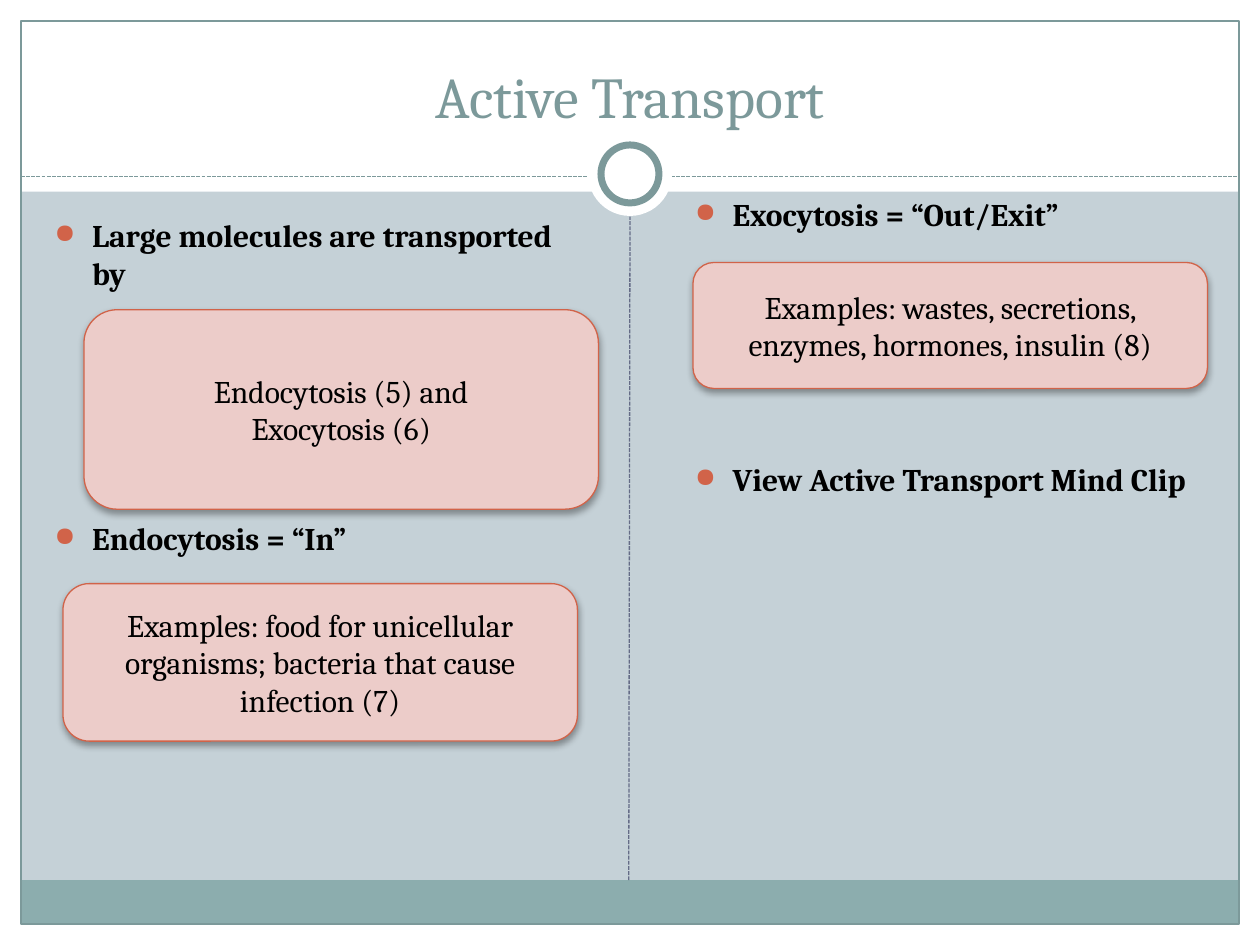
from lxml import etree
from pptx import Presentation
from pptx import util as u
from pptx.dml.color import RGBColor
from pptx.enum import dml, shapes, text
from pptx.oxml import parse_xml
from pptx.oxml.ns import nsdecls, qn

COLORS = {"background": "C5D1D7", "white": "FFFFFF", "footer": "8CADAE", "frame": "7C999A",
          "divider": "646B86", "accent": "D16349", "card": "ECCCC9", "ink": "000000"}
FONT = "Cambria"
WIDTH, HEIGHT, EDGE = 720, 540, 12
BODY_SIZE, INDENT, BULLET_GAP = 18, 21.6, 130

TITLE = ("Active Transport", (24, 18, 672, 60))
BANDS = [
    ("white", (0, HEIGHT - EDGE, WIDTH, EDGE)),
    ("white", (0, 0, WIDTH, 109.5)),
    ("white", (0, 0, EDGE, HEIGHT)),
    ("white", (WIDTH - EDGE, 0, EDGE, HEIGHT)),
    ("footer", (EDGE, 503, WIDTH - 2 * EDGE, 25)),
]
FRAME = (EDGE, EDGE, WIDTH - 2 * EDGE, HEIGHT - 2 * EDGE)
DIVIDERS = [
    ("frame", (EDGE, 100.8, WIDTH - EDGE, 100.8)),
    ("divider", (359.3, 503, 360, 123.8)),
]
RING_CENTER_Y = 99.4
RINGS = [(48, None, 0), (33.1, "frame", 4)]
COLUMNS = [
    (["Large molecules are transported\vby", "Endocytosis = “In”"], (24, 120, 402.5, 372)),
    (["Exocytosis = “Out/Exit”", "View Active Transport Mind Clip"], (390, 108, 306, 369)),
]
CARDS = [
    (["Endocytosis (5) and", "Exocytosis (6)"], (48, 177, 294, 114)),
    (["Examples: food for unicellular organisms; bacteria that cause infection (7)"],
     (36, 333.5, 294, 90)),
    (["Examples: wastes, secretions, enzymes, hormones, insulin (8)"], (396, 150, 294, 72)),
]


def apply(target, **values):
    """Set each named attribute on the target."""
    for name, value in values.items():
        setattr(target, name, value)


def rgb(name):
    """Return the named color."""
    return RGBColor.from_string(COLORS[name])


def points(values):
    """Convert numbers to lengths in points."""
    return [u.Pt(value) for value in values]


def add_outline(line, color, width):
    """Color a line and set its width."""
    line.color.rgb = rgb(color)
    line.width = u.Pt(width)


def add_block(slide, kind, box, fill=None, line=None, width=0.75):
    """Add a preset shape with an optional fill and outline."""
    shape = slide.shapes.add_shape(kind, *points(box))
    shape.shadow.inherit = False
    if fill:
        shape.fill.solid()
        shape.fill.fore_color.rgb = rgb(fill)
    else:
        shape.fill.background()
    if line:
        add_outline(shape.line, line, width)
    else:
        shape.line.fill.background()
    return shape


def add_divider(slide, color, ends):
    """Add a dashed straight line."""
    line = slide.shapes.add_connector(shapes.MSO_CONNECTOR.STRAIGHT, *points(ends))
    add_outline(line.line, color, 0.75)
    line.line.dash_style = dml.MSO_LINE.SQUARE_DOT
    etree.SubElement(line._element.spPr, qn("a:effectLst"))
    dash = line._element.spPr.find(".//" + qn("a:prstDash"))
    dash.set("val", "sysDash")


def write(frame, lines, size, color, align, bold=False):
    """Write paragraphs in one format and return them."""
    frame.word_wrap = True
    frame.text = "\n".join(lines)
    for paragraph in frame.paragraphs:
        paragraph.alignment = align
        for run in paragraph.runs:
            apply(run.font, name=FONT, size=u.Pt(size), bold=bold)
            run.font.color.rgb = rgb(color)
    return frame.paragraphs


def add_bullet(paragraph):
    """Give a paragraph a hanging accent bullet."""
    properties = paragraph._p.get_or_add_pPr()
    properties.set("marL", str(u.Pt(INDENT)))
    properties.set("indent", str(-u.Pt(INDENT)))
    color = etree.SubElement(properties, qn("a:buClr"))
    etree.SubElement(color, qn("a:srgbClr"), val=COLORS["accent"])
    etree.SubElement(properties, qn("a:buSzPct"), val="85000")
    etree.SubElement(properties, qn("a:buChar"), char="●")


def add_column(slide, lines, box):
    """Add a bulleted column with room for a card between bullets."""
    frame = slide.shapes.add_textbox(*points(box)).text_frame
    paragraphs = write(frame, lines, BODY_SIZE, "ink", text.PP_ALIGN.LEFT, True)
    for index, paragraph in enumerate(paragraphs):
        paragraph.space_before = u.Pt(BULLET_GAP if index else 1)
        add_bullet(paragraph)


def add_card(slide, lines, box):
    """Add a rounded card with a soft shadow below it."""
    card = add_block(slide, shapes.MSO_SHAPE.ROUNDED_RECTANGLE, box, "card", "accent")
    effects = card._element.spPr.find(qn("a:effectLst"))
    effects.append(parse_xml(
        f'<a:outerShdw {nsdecls("a")} blurRad="{u.Pt(4)}" dist="{u.Pt(2)}" dir="5400000" '
        f'rotWithShape="0"><a:srgbClr val="{COLORS["ink"]}"><a:alpha val="35000"/>'
        '</a:srgbClr></a:outerShdw>'))
    card.text_frame.vertical_anchor = text.MSO_ANCHOR.MIDDLE
    write(card.text_frame, lines, BODY_SIZE, "ink", text.PP_ALIGN.CENTER)


def add_title(slide, wording, box):
    """Place and format the title in front of the header band."""
    title = slide.shapes.title
    apply(title, **dict(zip(("left", "top", "width", "height"), points(box))))
    write(title.text_frame, [wording], 33, "frame", text.PP_ALIGN.CENTER)
    title.text_frame.vertical_anchor = text.MSO_ANCHOR.BOTTOM
    slide.shapes._spTree.append(title._element)


def main():
    """Build and save the slide."""
    presentation = Presentation()
    apply(presentation, slide_width=u.Pt(WIDTH), slide_height=u.Pt(HEIGHT))
    slide = presentation.slides.add_slide(presentation.slide_layouts[5])
    slide.background.fill.solid()
    slide.background.fill.fore_color.rgb = rgb("background")
    for color, box in BANDS:
        add_block(slide, shapes.MSO_SHAPE.RECTANGLE, box, color)
    add_block(slide, shapes.MSO_SHAPE.RECTANGLE, FRAME, line="frame")
    for color, ends in DIVIDERS:
        add_divider(slide, color, ends)
    for size, line, width in RINGS:
        box = ((WIDTH - size) / 2, RING_CENTER_Y - size / 2, size, size)
        add_block(slide, shapes.MSO_SHAPE.OVAL, box, "white", line, width)
    add_title(slide, *TITLE)
    for lines, box in COLUMNS:
        add_column(slide, lines, box)
    for lines, box in CARDS:
        add_card(slide, lines, box)
    presentation.save("out.pptx")


if __name__ == "__main__":
    main()
